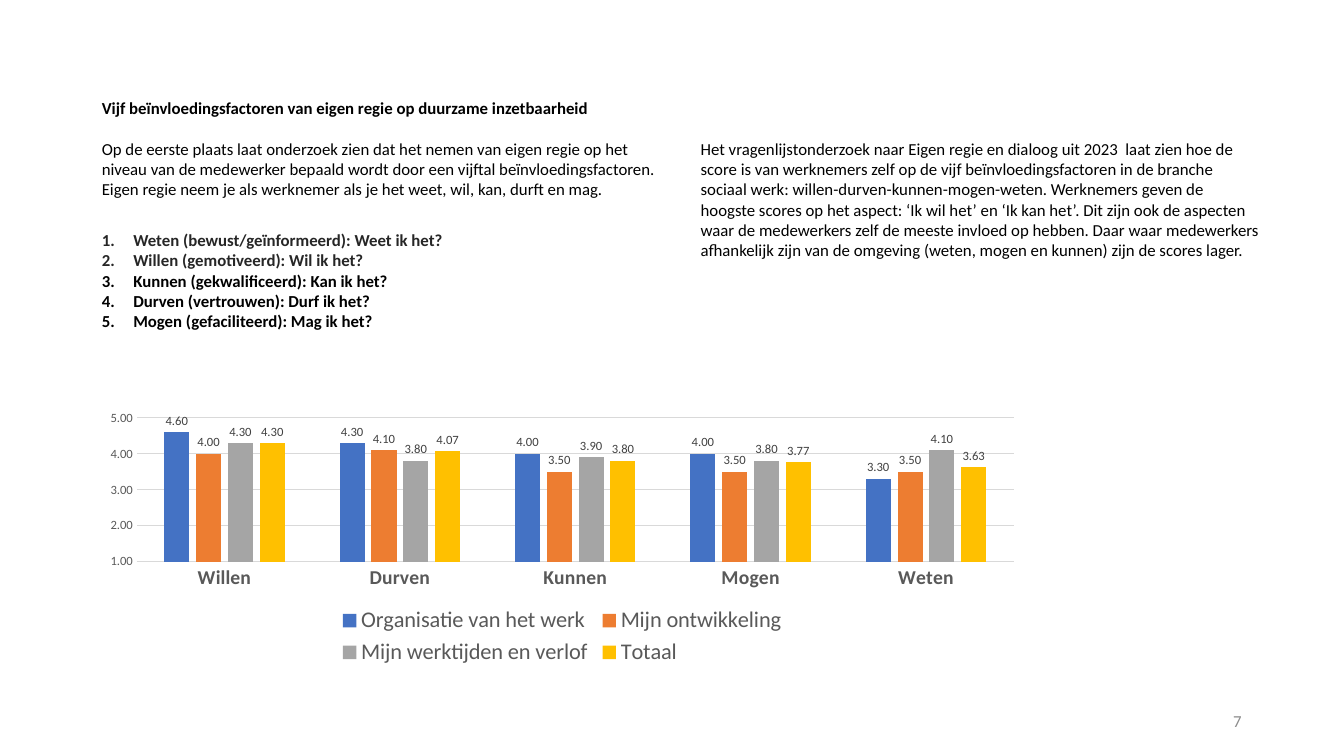
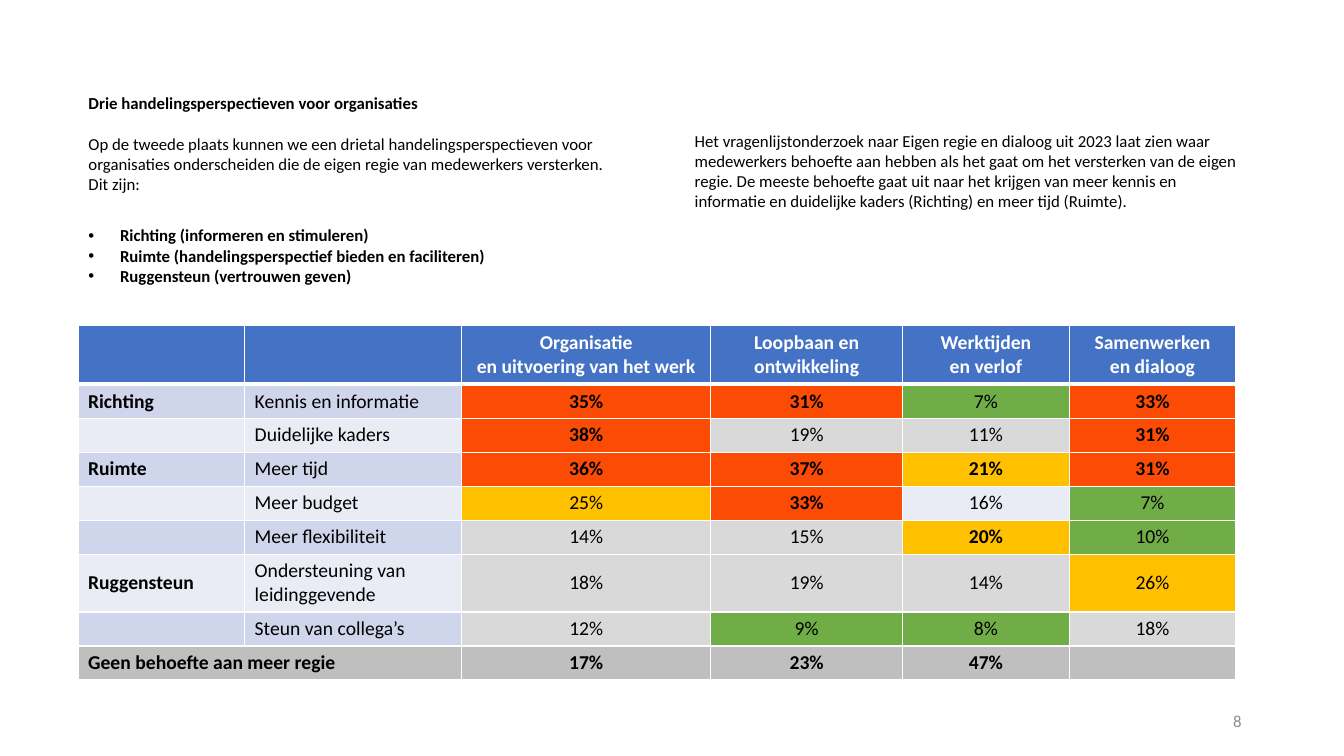
import dataclasses

import pptx
import pptx.chart.data
import pptx.dml.color
import pptx.enum.chart
import pptx.enum.text
import pptx.util
from lxml import etree
from pptx.oxml.ns import qn

Pt = pptx.util.Pt
RGB = pptx.dml.color.RGBColor.from_string
ALIGN = pptx.enum.text.PP_ALIGN
ANCHOR = pptx.enum.text.MSO_ANCHOR


@dataclasses.dataclass(frozen=True)
class Theme:
    font: str = "Calibri"
    text: str = "000000"
    soft_text: str = "262626"
    label: str = "404040"
    axis: str = "595959"
    page: str = "8C8C8C"
    grid: str = "D9D9D9"
    white: str = "FFFFFF"
    header: str = "4472C4"
    bands: tuple = ("CFD5EA", "E9EBF5")
    total: str = "BFBFBF"
    high: str = "FC4B04"
    raised: str = "FFC000"
    middle: str = "D9D9D9"
    low: str = "70AD47"
    series: tuple = ("4472C4", "ED7D31", "A5A5A5", "FFC000")
    body_size: int = 12
    table_size: int = 14
    category_size: int = 14
    legend_size: int = 16
    tick_size: int = 9


class Deck:
    """Holds the theme, the presentation and the current slide."""

    def __init__(self, theme):
        self.theme = theme
        self.prs = pptx.Presentation()
        self.prs.slide_width, self.prs.slide_height = Pt(960), Pt(540)
        self.s = None

    def slide(self, number):
        self.s = self.prs.slides.add_slide(self.prs.slide_layouts[3])
        sp = self.s.shapes.add_textbox(Pt(678), Pt(500.5), Pt(216), Pt(28.75))
        tf = self.frame(sp, ANCHOR.MIDDLE)
        p = tf.paragraphs[0]
        p.alignment = ALIGN.RIGHT
        self.run(p, str(number), color=self.theme.page)

    def style(self, font, size, color, bold=False):
        font.name, font.size, font.bold = self.theme.font, Pt(size), bold
        font.color.rgb = RGB(color)

    def run(self, p, text, size=None, color=None, bold=False):
        r = p.add_run()
        r.text = text
        self.style(r.font, size or self.theme.body_size, color or self.theme.text, bold)

    def frame(self, sp, anchor=ANCHOR.TOP):
        tf = sp.text_frame
        tf.word_wrap = True
        tf.auto_size = pptx.enum.text.MSO_AUTO_SIZE.NONE
        tf.vertical_anchor = anchor
        return tf

    def place(self, sp, x, y, w, h):
        sp.left, sp.top, sp.width, sp.height = Pt(x), Pt(y), Pt(w), Pt(h)
        return self.frame(sp)

    def title(self, text, x, y, w):
        p = self.place(self.s.shapes.title, x, y, w, 24).paragraphs[0]
        p.alignment = ALIGN.LEFT
        self.run(p, text, bold=True)

    def body(self, idx, box, text, items=(), numbered=False, soft=0):
        """Fill a body placeholder; the first `soft` list items are dark grey."""
        tf = self.place(self.s.placeholders[idx], *box)
        p = tf.paragraphs[0]
        self.bullet(p)
        self.run(p, text)
        for i, item in enumerate(items):
            p = tf.add_paragraph()
            self.bullet(p, "number" if numbered else "dot", 22 if i == 0 else 0)
            color = self.theme.soft_text if i < soft else self.theme.text
            self.run(p, item, color=color, bold=True)

    def bullet(self, p, kind=None, before=0):
        p.space_before = Pt(before)
        pPr = p._p.get_or_add_pPr()
        indent = Pt(22.5) if kind else 0
        pPr.set("marL", str(indent))
        pPr.set("indent", str(-indent))
        if kind == "number":
            etree.SubElement(pPr, qn("a:buFont"), typeface="+mj-lt")
            etree.SubElement(pPr, qn("a:buAutoNum"), type="arabicPeriod")
        elif kind == "dot":
            etree.SubElement(pPr, qn("a:buFont"), typeface="Arial")
            etree.SubElement(pPr, qn("a:buChar"), char="•")
        else:
            etree.SubElement(pPr, qn("a:buNone"))

    def column_chart(self, box, categories, series):
        t = self.theme
        data = pptx.chart.data.CategoryChartData(number_format="0.00")
        data.categories = categories
        for name, values in series.items():
            data.add_series(name, values)
        kind = pptx.enum.chart.XL_CHART_TYPE.COLUMN_CLUSTERED
        chart = self.s.shapes.add_chart(kind, *map(Pt, box), data).chart
        self.style(chart.font, 10, t.text)
        chart.has_title = False
        chart.has_legend = True
        chart.legend.position = pptx.enum.chart.XL_LEGEND_POSITION.BOTTOM
        chart.legend.include_in_layout = False
        self.style(chart.legend.font, t.legend_size, t.axis)

        plot = chart.plots[0]
        plot.gap_width, plot.overlap, plot.vary_by_categories = 219, -27, False
        for ser, color in zip(plot.series, t.series):
            ser.format.fill.solid()
            ser.format.fill.fore_color.rgb = RGB(color)
            labels = ser.data_labels
            labels.show_value = True
            labels.position = pptx.enum.chart.XL_LABEL_POSITION.OUTSIDE_END
            labels.number_format, labels.number_format_is_linked = "0.00", False
            self.style(labels.font, t.tick_size, t.label)

        cat, val = chart.category_axis, chart.value_axis
        for axis in (cat, val):
            axis.major_tick_mark = pptx.enum.chart.XL_TICK_MARK.NONE
            axis.minor_tick_mark = pptx.enum.chart.XL_TICK_MARK.NONE
        self.style(cat.tick_labels.font, t.category_size, t.axis, True)
        self.style(val.tick_labels.font, t.tick_size, t.axis)
        val.minimum_scale, val.maximum_scale, val.major_unit = 1, 5, 1
        val.tick_labels.number_format = "0.00"
        val.tick_labels.number_format_is_linked = False
        val.has_major_gridlines = True
        val.format.line.fill.background()
        for line in (cat.format.line, val.major_gridlines.format.line):
            line.color.rgb, line.width = RGB(t.grid), Pt(0.75)

    def cell(self, cell, text, fill, color=None, bold=False, center=False, top=1, bottom=1):
        t = self.theme
        tcPr = cell._tc.get_or_add_tcPr()
        for side, width in (("L", 1), ("R", 1), ("T", top), ("B", bottom)):
            ln = etree.SubElement(tcPr, qn(f"a:ln{side}"), w=str(Pt(width)))
            solid = etree.SubElement(ln, qn("a:solidFill"))
            etree.SubElement(solid, qn("a:srgbClr"), val=t.white)
        cell.fill.solid()
        cell.fill.fore_color.rgb = RGB(fill)
        cell.vertical_anchor = ANCHOR.MIDDLE
        p = cell.text_frame.paragraphs[0]
        if center:
            p.alignment = ALIGN.CENTER
        if not text:
            etree.SubElement(p._p, qn("a:endParaRPr"), sz=str(t.table_size * 100))
            return
        for i, line in enumerate(text.split("\n")):
            if i:
                p.add_line_break()
            self.run(p, line, t.table_size, color, bold)

    def score_color(self, score):
        t = self.theme
        if score >= 30:
            return t.high
        if score >= 20:
            return t.raised
        return t.middle if score > 10 else t.low

    def score_table(self, x, y, widths, heights, header, rows, total, strong, plain):
        """Scores from 30 and those in `strong` are bold; `plain` cells keep the band fill."""
        t = self.theme
        shape = self.s.shapes.add_table(
            len(heights), len(widths), Pt(x), Pt(y), Pt(sum(widths)), Pt(sum(heights)))
        table = shape.table
        for col, width in zip(table.columns, widths):
            col.width = Pt(width)
        for row, height in zip(table.rows, heights):
            row.height = Pt(height)
        for c, text in enumerate(header):
            self.cell(table.cell(0, c), text, t.header, t.white, True, True, bottom=3)
        for r, (group, topic, *scores) in enumerate(rows, 1):
            band = t.bands[(r - 1) % 2]
            top = 3 if r == 1 else 1
            self.cell(table.cell(r, 0), group, band, bold=True, top=top)
            self.cell(table.cell(r, 1), topic, band, top=top)
            for c, score in enumerate(scores, 2):
                fill = band if (r, c) in plain else self.score_color(score)
                bold = score >= 30 or score in strong
                self.cell(table.cell(r, c), f"{score}%", fill, bold=bold, center=True, top=top)
        last = len(heights) - 1
        table.cell(last, 0).merge(table.cell(last, 1))
        for c, text in enumerate(total):
            self.cell(table.cell(last, c), text, t.total, bold=True, center=c > 1)


def factors_slide(deck):
    deck.slide(7)
    deck.title("Vijf beïnvloedingsfactoren van eigen regie op duurzame inzetbaarheid", 65.5, 66.25, 415)
    deck.body(
        1, (65.5, 95.5, 415, 167),
        "Op de eerste plaats laat onderzoek zien dat het nemen van eigen regie op het niveau van de "
        "medewerker bepaald wordt door een vijftal beïnvloedingsfactoren. Eigen regie neem je als "
        "werknemer als je het weet, wil, kan, durft en mag.",
        ["Weten (bewust/geïnformeerd): Weet ik het?",
         "Willen (gemotiveerd): Wil ik het?",
         "Kunnen (gekwalificeerd): Kan ik het?",
         "Durven (vertrouwen): Durf ik het?",
         "Mogen (gefaciliteerd): Mag ik het?"],
        numbered=True, soft=2)
    deck.body(
        2, (493.25, 95.5, 415, 109),
        "Het vragenlijstonderzoek naar Eigen regie en dialoog uit 2023  laat zien hoe de score is van "
        "werknemers zelf op de vijf beïnvloedingsfactoren in de branche sociaal werk: "
        "willen-durven-kunnen-mogen-weten. Werknemers geven de hoogste scores op het aspect: "
        "‘Ik wil het’ en ‘Ik kan het’. Dit zijn ook de aspecten waar de medewerkers zelf de meeste "
        "invloed op hebben. Daar waar medewerkers afhankelijk zijn van de omgeving (weten, mogen en "
        "kunnen) zijn de scores lager.")
    deck.column_chart(
        (65.5, 289.5, 672, 189.5),
        ["Willen", "Durven", "Kunnen", "Mogen", "Weten"],
        {"Organisatie van het werk": (4.6, 4.3, 4, 4, 3.3),
         "Mijn ontwikkeling": (4, 4.1, 3.5, 3.5, 3.5),
         "Mijn werktijden en verlof": (4.3, 3.8, 3.9, 3.8, 4.1),
         "Totaal": (4.3, 4.07, 3.8, 3.77, 3.63)})


def perspectives_slide(deck):
    deck.slide(8)
    deck.title("Drie handelingsperspectieven voor organisaties", 56, 62.75, 396)
    deck.body(
        1, (56, 92, 396, 152),
        "Op de tweede plaats kunnen we een drietal handelingsperspectieven voor organisaties "
        "onderscheiden die de eigen regie van medewerkers versterken. Dit zijn:",
        ["Richting (informeren en stimuleren)",
         "Ruimte (handelingsperspectief bieden en faciliteren)",
         "Ruggensteun (vertrouwen geven)"])
    deck.body(
        2, (489, 89.5, 405, 109),
        "Het vragenlijstonderzoek naar Eigen regie en dialoog uit 2023 laat zien waar medewerkers "
        "behoefte aan hebben als het gaat om het versterken van de eigen regie. De meeste behoefte "
        "gaat uit naar het krijgen van meer kennis en informatie en duidelijke kaders (Richting) en "
        "meer tijd (Ruimte).")
    deck.score_table(
        55.75, 232.5,
        widths=[119, 155, 178, 137, 119, 119],
        heights=[42] + [24.2] * 5 + [41.4] + [24.2] * 2,
        header=["", "", "Organisatie\nen uitvoering van het werk", "Loopbaan en\nontwikkeling",
                "Werktijden\nen verlof", "Samenwerken\nen dialoog"],
        rows=[("Richting", "Kennis en informatie", 35, 31, 7, 33),
              ("", "Duidelijke kaders", 38, 19, 11, 31),
              ("Ruimte", "Meer tijd", 36, 37, 21, 31),
              ("", "Meer budget", 25, 33, 16, 7),
              ("", "Meer flexibiliteit", 14, 15, 20, 10),
              ("Ruggensteun", "Ondersteuning van leidinggevende", 18, 19, 14, 26),
              ("", "Steun van collega’s", 12, 9, 8, 18)],
        total=["Geen behoefte aan meer regie", "", "17%", "23%", "47%", ""],
        strong={20, 21}, plain={(4, 4)})


def main():
    deck = Deck(Theme())
    factors_slide(deck)
    perspectives_slide(deck)
    deck.prs.save("out.pptx")


if __name__ == "__main__":
    main()
